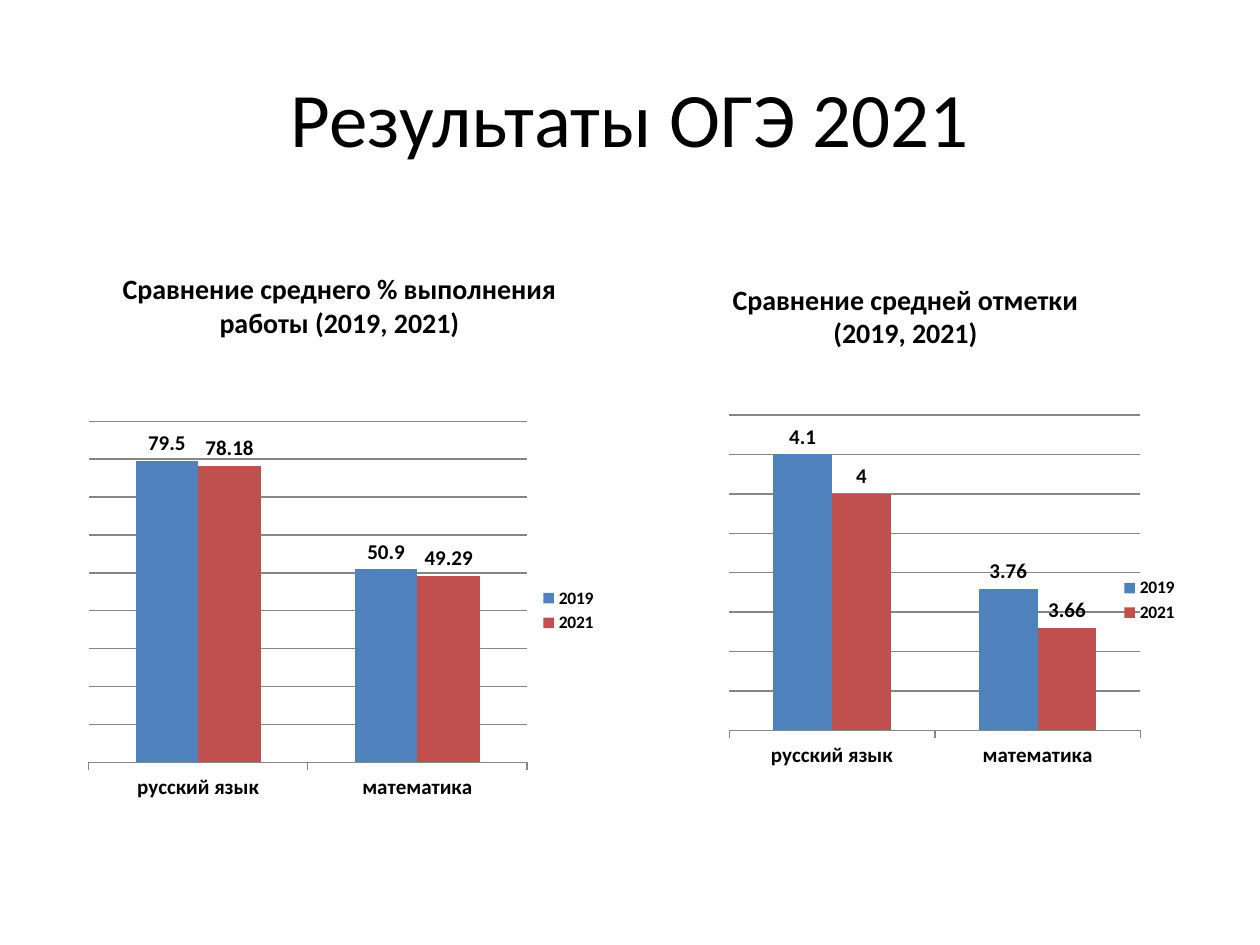
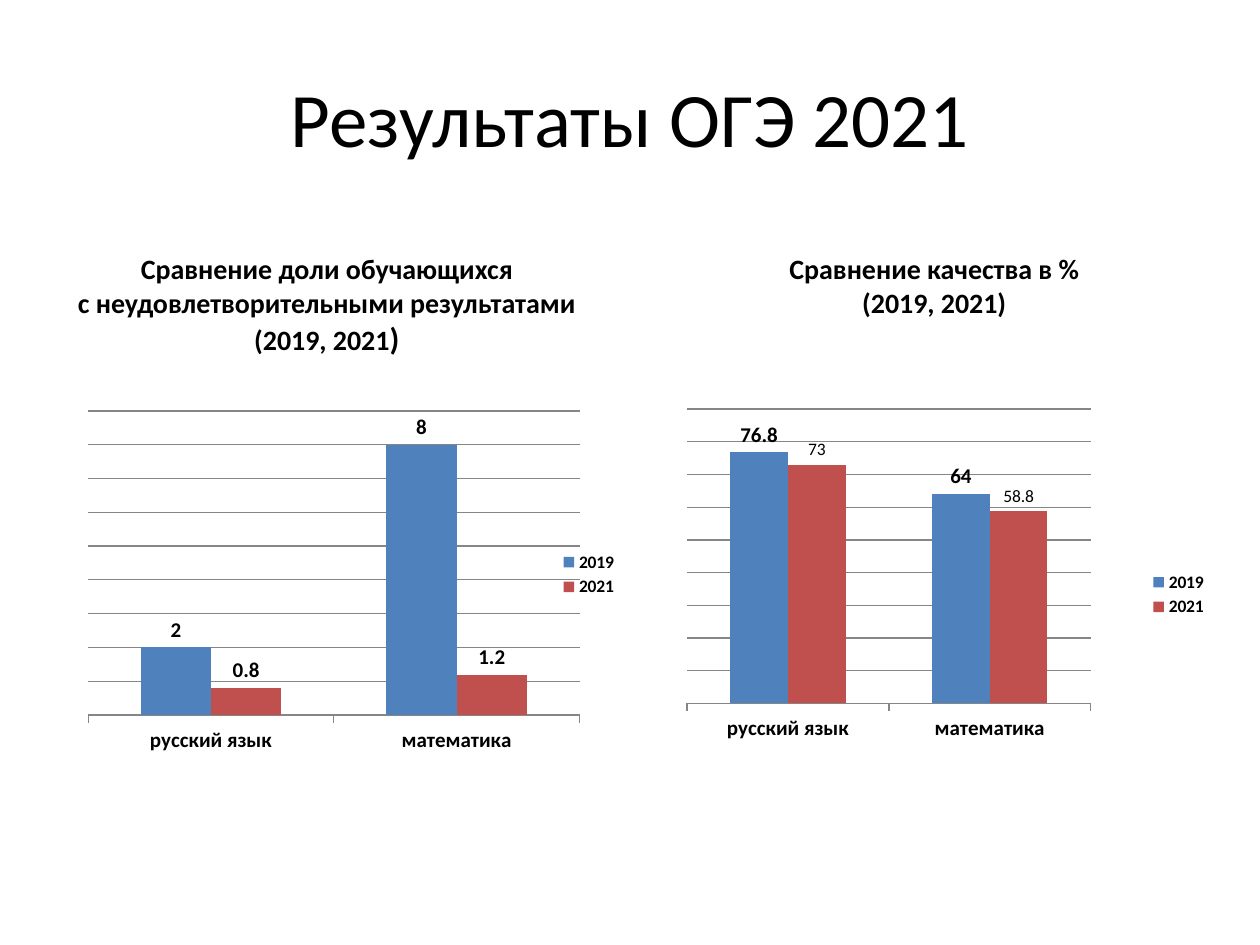
from dataclasses import dataclass

from lxml.etree import SubElement
from pptx import Presentation
from pptx.chart.data import CategoryChartData
from pptx.dml.color import RGBColor
from pptx.enum.chart import XL_CHART_TYPE as ChartType
from pptx.enum.chart import XL_LABEL_POSITION as LabelPosition
from pptx.enum.chart import XL_LEGEND_POSITION as LegendPosition
from pptx.enum.chart import XL_TICK_MARK as TickMark
from pptx.enum.text import MSO_ANCHOR as Anchor
from pptx.enum.text import PP_ALIGN as Align
from pptx.oxml.ns import qn
from pptx.util import Pt


@dataclass(frozen=True)
class Theme:
    """Colours and type sizes shared by all slides."""

    font: str = "Calibri"
    ink: RGBColor = RGBColor(0, 0, 0)
    grid: RGBColor = RGBColor(0x86, 0x86, 0x86)
    bars: tuple = (RGBColor(0x4F, 0x81, 0xBD), RGBColor(0xC0, 0x50, 0x4D))
    title: int = 44
    caption: int = 16
    label: int = 12
    legend: int = 10


@dataclass(frozen=True)
class Panel:
    """A captioned chart comparing two years."""

    caption: tuple
    caption_box: tuple
    chart_box: tuple
    values: tuple
    scale: tuple
    plot: tuple = ()
    wrap: bool = True
    plain_labels: bool = False


THEME = Theme()
TITLE = "Результаты ОГЭ 2021"
TITLE_BOX = (36, 21.6, 648, 90)
SUBJECTS = ("русский язык", "математика")
YEARS = ("2019", "2021")

SLIDES = (
    (
        Panel((("Сравнение среднего % выполнения работы (2019, 2021)",),),
              (61.9, 151.9, 264.2, 46.1), (44.6, 236.2, 303.8, 225.4),
              ((79.5, 50.9), (78.18, 49.29)), (0, 90, 10)),
        Panel((("Сравнение средней отметки (2019, 2021)",),),
              (405.4, 157.7, 223.9, 46.1), (393.8, 230.4, 286.6, 225.4),
              ((4.1, 3.76), (4, 3.66)), (3.4, 4.2, 0.1),
              plot=(0.08, 0.03, 0.82, 0.8)),
    ),
    (
        Panel((("Сравнение качества в % (2019, 2021)",),),
              (421.9, 140.4, 223.9, 46.1), (376.6, 224.6, 320.4, 230.4),
              ((76.8, 64), (73, 58.8)), (0, 90, 10),
              plot=(0.05, 0.04, 0.72, 0.73), plain_labels=True),
        Panel((("Сравнение доли обучающихся",),
               ("с неудовлетворительными результатами",),
               ("(2019, 2021", (")", 18))),
              (33.8, 140.4, 306, 67.7), (0, 219.6, 360, 217.4),
              ((2, 8), (0.8, 1.2)), (0, 9, 1),
              plot=(0.14, 0.07, 0.78, 0.8), wrap=False),
    ),
)


def points(box):
    """Turn a box of numbers into lengths in points."""
    return [Pt(length) for length in box]


def style_font(font, size, bold=False):
    """Apply the theme's typeface and ink at one size."""
    font.name = THEME.font
    font.size = Pt(size)
    font.bold = bold
    font.color.rgb = THEME.ink


def add_title(page, box):
    """Place and format the title placeholder."""
    title = page.shapes.title
    title.left, title.top, title.width, title.height = points(box)
    title.text_frame.text = TITLE
    title.text_frame.vertical_anchor = Anchor.MIDDLE
    para = title.text_frame.paragraphs[0]
    para.alignment = Align.CENTER
    style_font(para.font, THEME.title)


def add_caption(page, box, lines, wrap):
    """Write the bold centred heading above a chart."""
    frame = page.shapes.add_textbox(*points(box)).text_frame
    frame.word_wrap = wrap
    for index, line in enumerate(lines):
        para = frame.add_paragraph() if index else frame.paragraphs[0]
        para.alignment = Align.CENTER
        style_font(para.font, THEME.caption, bold=True)
        for part in line:
            span = para.add_run()
            if isinstance(part, tuple):
                span.text, size = part
                span.font.size = Pt(size)
            else:
                span.text = part


def place_plot(chart, plot):
    """Fix the inner plot area as fractions of the chart."""
    area = chart.element.find(".//" + qn("c:plotArea"))
    for layout in area.findall(qn("c:layout")):
        area.remove(layout)
    layout = SubElement(area, qn("c:layout"))
    area.insert(0, layout)
    manual = SubElement(layout, qn("c:manualLayout"))
    settings = [("layoutTarget", "inner"), ("xMode", "edge"), ("yMode", "edge")]
    settings += zip("xywh", plot)
    for name, value in settings:
        SubElement(manual, qn(f"c:{name}")).set("val", str(value))


def style_axes(chart, scale):
    """Show subjects below and only gridlines for the values."""
    subjects = chart.category_axis
    subjects.major_tick_mark = TickMark.OUTSIDE
    subjects.format.line.color.rgb = THEME.grid
    style_font(subjects.tick_labels.font, THEME.label, bold=True)
    values = chart.value_axis
    values.minimum_scale, values.maximum_scale, values.major_unit = scale
    values.visible = False
    values.has_major_gridlines = True
    gridline = values.major_gridlines.format.line
    gridline.color.rgb = THEME.grid
    gridline.width = Pt(0.75)


def style_series(series, color, plain):
    """Colour one year's bars and label their values."""
    series.format.fill.solid()
    series.format.fill.fore_color.rgb = color
    if plain:
        for index in range(len(SUBJECTS)):
            series.points[index].data_label.position = LabelPosition.OUTSIDE_END
        return
    labels = series.data_labels
    labels.show_value = True
    labels.position = LabelPosition.OUTSIDE_END
    style_font(labels.font, THEME.label, bold=True)


def add_bars(page, box, panel):
    """Draw the clustered columns with a legend at the right."""
    data = CategoryChartData()
    data.categories = SUBJECTS
    for year, values in zip(YEARS, panel.values):
        data.add_series(year, values)
    chart = page.shapes.add_chart(
        ChartType.COLUMN_CLUSTERED, *points(box), data).chart
    chart.has_title = False
    style_font(chart.font, THEME.legend)
    chart.has_legend = True
    chart.legend.position = LegendPosition.RIGHT
    chart.legend.include_in_layout = False
    style_font(chart.legend.font, THEME.legend, bold=True)
    style_axes(chart, panel.scale)
    bars = chart.plots[0]
    bars.gap_width = 150
    bars.overlap = 0
    bars.vary_by_categories = False
    for index, series in enumerate(bars.series):
        style_series(series, THEME.bars[index], panel.plain_labels and index == 1)
    if panel.plot:
        place_plot(chart, panel.plot)


def add_results(deck, panels):
    """Add a results slide with its title and chart panels."""
    page = deck.slides.add_slide(deck.slide_layouts.get_by_name("Title Only"))
    add_title(page, TITLE_BOX)
    for panel in panels:
        add_bars(page, panel.chart_box, panel)
        add_caption(page, panel.caption_box, panel.caption, panel.wrap)


def main():
    """Build and save the deck."""
    deck = Presentation()
    deck.slide_width, deck.slide_height = Pt(720), Pt(540)
    for panels in SLIDES:
        add_results(deck, panels)
    deck.save("out.pptx")


if __name__ == "__main__":
    main()
